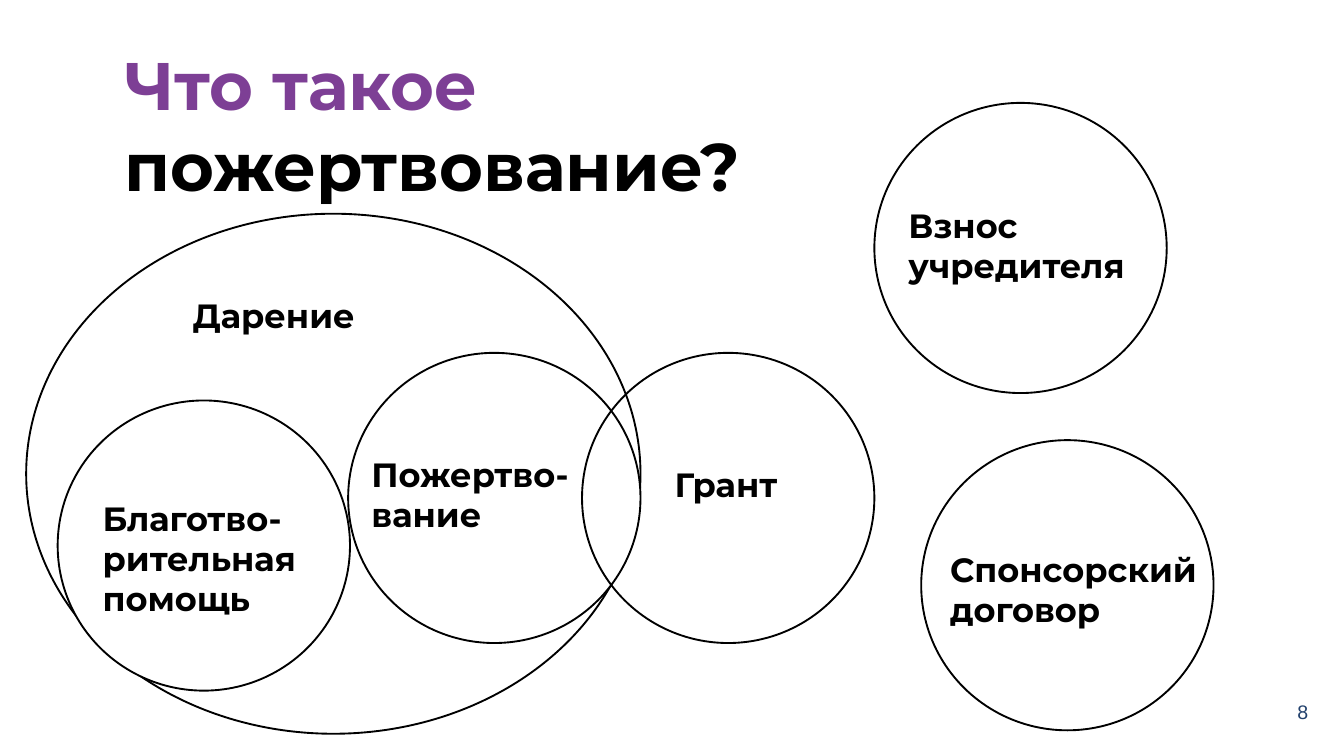
from dataclasses import dataclass

from pptx import Presentation
from pptx import util as u
from pptx.dml.color import RGBColor
from pptx.enum import shapes, text


@dataclass(frozen=True)
class Theme:
    black: RGBColor = RGBColor(0x00, 0x00, 0x00)
    white: RGBColor = RGBColor(0xFF, 0xFF, 0xFF)
    purple: RGBColor = RGBColor(0x7D, 0x3F, 0x95)
    navy: RGBColor = RGBColor(0x22, 0x41, 0x6D)
    heading_font: str = "Montserrat"
    number_font: str = "Arial"
    title_size: int = 72
    label_size: int = 36
    number_size: int = 21
    outline: int = 2


@dataclass(frozen=True)
class Box:
    """Left, top, width and height in centimetres."""
    left: float
    top: float
    width: float
    height: float

    def lengths(self) -> tuple:
        return tuple(u.Cm(side) for side in
                     (self.left, self.top, self.width, self.height))


@dataclass(frozen=True)
class Concept:
    """An ellipse of the diagram and the lines of its label."""
    ellipse: Box
    label: Box
    lines: tuple
    filled: bool = False
    wrap: bool = False


THEME = Theme()
CIRCLE = (11.05, 10.97)
INSET = u.Cm(0.38)

CONCEPTS = (
    Concept(Box(0.99, 8.08, 23.22, 19.66), Box(7.04, 11.02, 6.76, 1.8),
            ("Дарение",), filled=True),
    Concept(Box(13.16, 13.34, *CIRCLE), Box(13.79, 17.02, 8.2, 3.33),
            ("Пожертво-", "вание"), filled=True),
    Concept(Box(22, 13.34, *CIRCLE), Box(25.25, 17.42, 4.57, 1.8),
            ("Грант",)),
    Concept(Box(2.18, 15.14, *CIRCLE), Box(3.63, 18.69, 8.05, 4.88),
            ("Благотво-", "рительная", "помощь"), filled=True),
    Concept(Box(33.05, 3.89, *CIRCLE), Box(34.09, 7.62, 8.97, 3.33),
            ("Взнос", "учредителя")),
    Concept(Box(34.82, 16.64, *CIRCLE), Box(35.66, 20.62, 10.24, 3.33),
            ("Спонсорский", "договор"), wrap=True),
)


def add_run(paragraph, words: str, size: int, color: RGBColor,
            font: str = THEME.heading_font, bold: bool = True) -> None:
    run = paragraph.add_run()
    run.text = words
    run.font.name = font
    run.font.size = u.Pt(size)
    run.font.bold = bold
    run.font.color.rgb = color


def set_insets(frame) -> None:
    frame.margin_left = frame.margin_right = INSET
    frame.margin_top = frame.margin_bottom = INSET


def add_title(slide) -> None:
    title = slide.shapes.title
    title.left, title.top, title.width, title.height = Box(
        4.32, 1.27, 35.38, 3.73).lengths()
    frame = title.text_frame
    set_insets(frame)
    frame.word_wrap = True
    frame.auto_size = text.MSO_AUTO_SIZE.NONE
    frame.vertical_anchor = text.MSO_ANCHOR.TOP
    paragraph = frame.paragraphs[0]
    paragraph.alignment = text.PP_ALIGN.LEFT
    add_run(paragraph, "Что такое ", THEME.title_size, THEME.purple)
    add_run(paragraph, "пожертвование?", THEME.title_size, THEME.black)


def add_slide_number(slide, number: str) -> None:
    frame = slide.shapes.add_textbox(
        *Box(48.26, 26.09, 1.96, 1.65).lengths()).text_frame
    set_insets(frame)
    frame.word_wrap = True
    frame.vertical_anchor = text.MSO_ANCHOR.MIDDLE
    paragraph = frame.paragraphs[0]
    paragraph.alignment = text.PP_ALIGN.CENTER
    add_run(paragraph, number, THEME.number_size, THEME.navy,
            THEME.number_font, bold=False)


def add_concept(slide, concept: Concept) -> None:
    # Outline
    ellipse = slide.shapes.add_shape(shapes.MSO_SHAPE.OVAL,
                                     *concept.ellipse.lengths())
    ellipse.shadow.inherit = False
    if concept.filled:
        ellipse.fill.solid()
        ellipse.fill.fore_color.rgb = THEME.white
    else:
        ellipse.fill.background()
    ellipse.line.color.rgb = THEME.black
    ellipse.line.width = u.Pt(THEME.outline)

    # Label
    frame = slide.shapes.add_textbox(*concept.label.lengths()).text_frame
    frame.word_wrap = concept.wrap
    frame.auto_size = text.MSO_AUTO_SIZE.SHAPE_TO_FIT_TEXT
    for index, line in enumerate(concept.lines):
        paragraph = frame.add_paragraph() if index else frame.paragraphs[0]
        add_run(paragraph, line, THEME.label_size, THEME.black)


def main() -> None:
    presentation = Presentation()
    presentation.slide_width = u.Cm(50.8)
    presentation.slide_height = u.Cm(28.58)
    title_only = presentation.slide_layouts[5]
    slide = presentation.slides.add_slide(title_only)

    add_title(slide)
    add_slide_number(slide, "8")
    for concept in CONCEPTS:
        add_concept(slide, concept)

    presentation.save("out.pptx")


if __name__ == "__main__":
    main()
